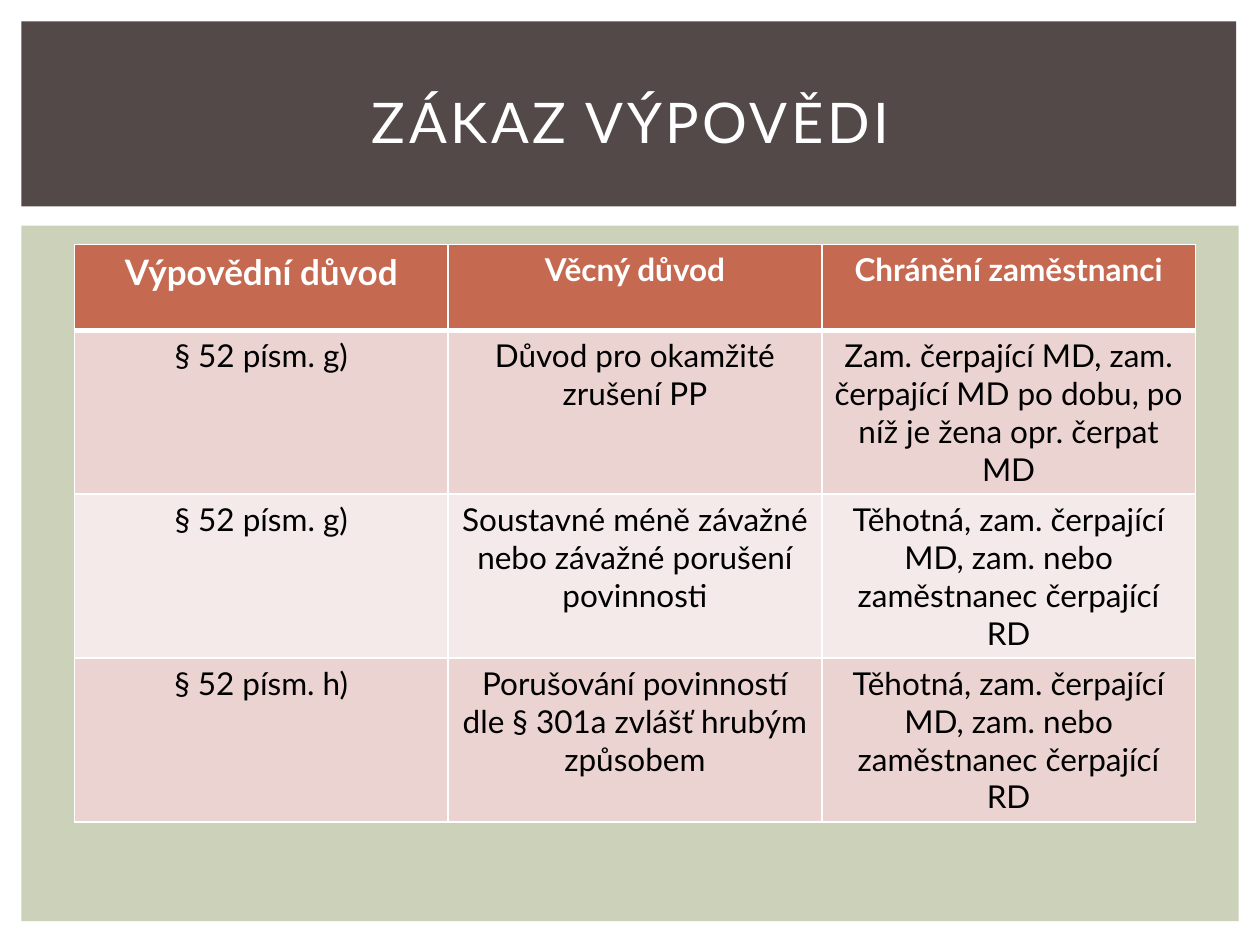
from collections import namedtuple
from dataclasses import dataclass

from lxml import etree
from pptx import Presentation
from pptx.dml.color import RGBColor
from pptx.enum.shapes import MSO_SHAPE
from pptx.enum.text import MSO_ANCHOR, PP_ALIGN
from pptx.oxml.ns import qn
from pptx.util import Cm, Pt

RECTANGLE = MSO_SHAPE.RECTANGLE
CENTER = PP_ALIGN.CENTER
MIDDLE = MSO_ANCHOR.MIDDLE

Box = namedtuple("Box", "left top width height")


@dataclass(frozen=True)
class Theme:
    font: str = "Lato"
    white: str = "FFFFFF"
    black: str = "000000"
    banner: str = "534949"
    panel: str = "CCD1B9"
    header: str = "C66951"
    bands: tuple = ("EAD3D0", "F4EAE9")
    title_size: int = 32
    lead_size: int = 20
    text_size: int = 18
    thin_line: float = 0.96
    thick_line: float = 3


THEME = Theme()

HEADINGS = ["Výpovědní důvod", "Věcný důvod", "Chránění zaměstnanci"]
PARENTS = "Těhotná, zam. čerpající MD, zam. nebo zaměstnanec čerpající RD"
GROUNDS = [
    ["§ 52 písm. g)", "Důvod pro okamžité zrušení PP",
     "Zam. čerpající MD, zam. čerpající MD po dobu, po níž je žena opr. čerpat MD"],
    ["§ 52 písm. g)", "Soustavné méně závažné nebo závažné porušení povinnosti", PARENTS],
    ["§ 52 písm. h)", "Porušování povinností dle § 301a zvlášť hrubým způsobem", PARENTS],
]


def write_text(frame, text, size, color, bold=False):
    para = frame.paragraphs[0]
    para.alignment = CENTER
    span = para.add_run()
    span.text = text
    formats = {"name": THEME.font, "size": Pt(size), "bold": bold}
    for name, value in formats.items():
        setattr(span.font, name, value)
    span.font.color.rgb = RGBColor.from_string(color)
    return span


def add_panel(page, box, color):
    panel = page.shapes.add_shape(RECTANGLE, *map(Cm, box))
    panel.shadow.inherit = False
    panel.fill.solid()
    panel.fill.fore_color.rgb = RGBColor.from_string(color)
    panel.line.fill.background()


def add_banner(page, box, title):
    add_panel(page, box, THEME.banner)
    title_box = Box(box.left + 0.64, box.top + 0.56, box.width - 1.2, 2.92)
    frame = page.shapes.add_textbox(*map(Cm, title_box)).text_frame
    frame.word_wrap = True
    frame.vertical_anchor = MIDDLE
    span = write_text(frame, title, THEME.title_size, THEME.white)
    span.font._element.set("spc", "200")


def set_borders(cell, widths):
    """Draw white cell borders; widths are points for left, right, top, bottom."""
    properties = cell._tc.get_or_add_tcPr()
    for side, width in zip("LRTB", widths):
        line = etree.SubElement(properties, qn(f"a:ln{side}"), w=str(int(Pt(width))))
        fill = etree.SubElement(line, qn("a:solidFill"))
        etree.SubElement(fill, qn("a:srgbClr"), val=THEME.white)


def add_grounds_table(page, box, header_height):
    rows = [HEADINGS, *GROUNDS]
    table = page.shapes.add_table(len(rows), len(HEADINGS), *map(Cm, box)).table
    for column in table.columns:
        column.width = Cm(box.width / len(HEADINGS))
    body_height = (box.height - header_height) / len(GROUNDS)
    thin, thick = THEME.thin_line, THEME.thick_line

    for i, texts in enumerate(rows):
        is_header = i == 0
        table.rows[i].height = Cm(header_height if is_header else body_height)
        fill = THEME.header if is_header else THEME.bands[(i - 1) % 2]
        color = THEME.white if is_header else THEME.black
        top = thick if i == 1 else thin
        bottom = thick if is_header else thin
        for j, text in enumerate(texts):
            cell = table.cell(i, j)
            set_borders(cell, (thin, thin, top, bottom))
            cell.fill.solid()
            cell.fill.fore_color.rgb = RGBColor.from_string(fill)
            size = THEME.lead_size if is_header and j == 0 else THEME.text_size
            write_text(cell.text_frame, text, size, color, bold=is_header)


def add_body(page, box):
    add_panel(page, box, THEME.panel)
    table_box = Box(box.left + 1.07, box.top + 0.38, 22.6, 11.63)
    add_grounds_table(page, table_box, header_height=1.73)


def main():
    deck = Presentation()
    deck.slide_width, deck.slide_height = Cm(25.4), Cm(19.05)
    page = deck.slides.add_slide(deck.slide_layouts[6])
    add_banner(page, Box(0.43, 0.43, 24.49, 3.73), "ZÁKAZ VÝPOVĚDI")
    add_body(page, Box(0.43, 4.55, 24.54, 14.02))
    deck.save("out.pptx")


if __name__ == "__main__":
    main()
